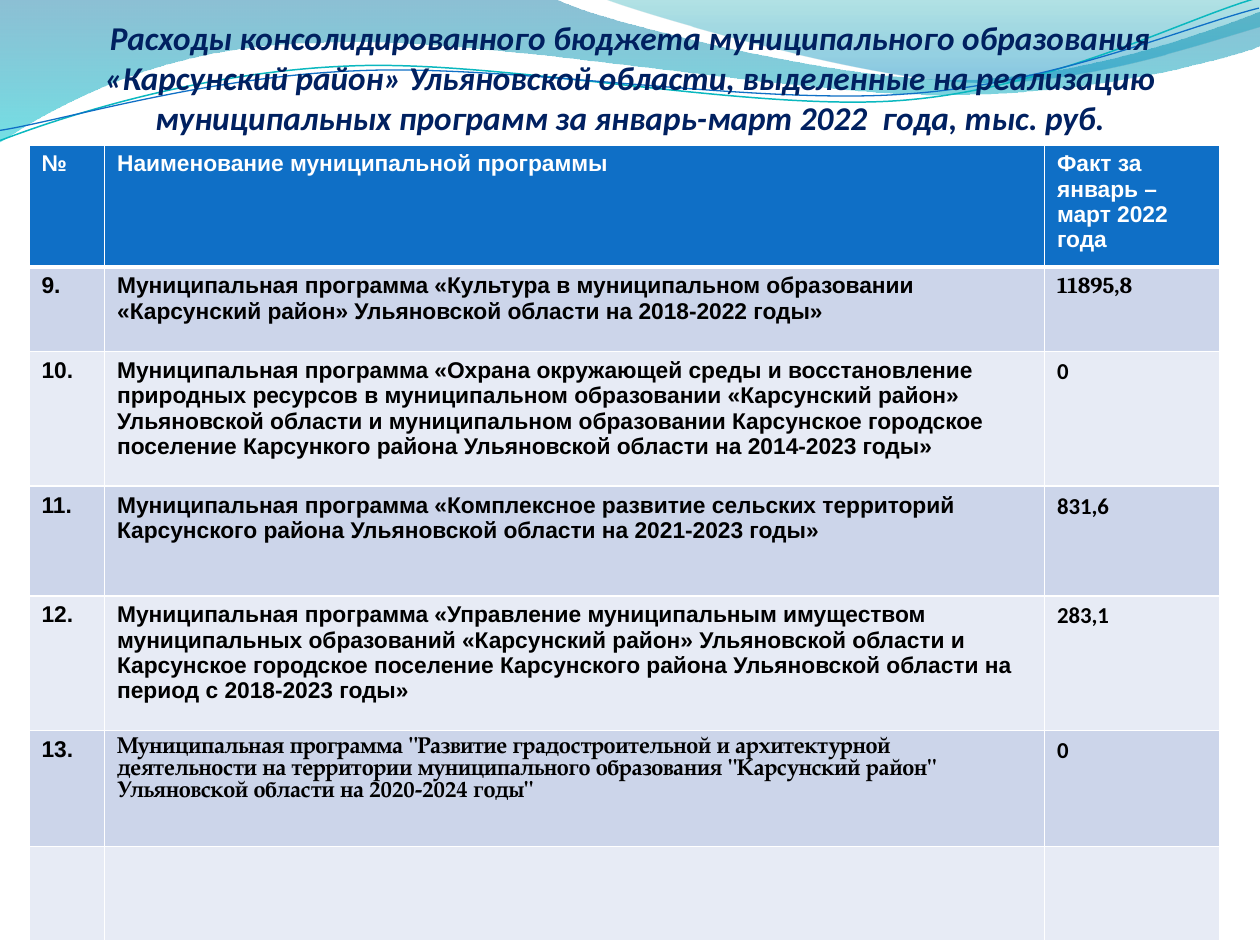
from lxml import etree
from pptx import Presentation
from pptx.dml.color import RGBColor
from pptx.enum.text import MSO_ANCHOR, PP_ALIGN
from pptx.oxml.ns import qn
from pptx.util import Inches, Pt

BOTTOM = MSO_ANCHOR.BOTTOM
CENTER = PP_ALIGN.CENTER
WHITE = RGBColor(0xFF, 0xFF, 0xFF)
BLACK = RGBColor(0x00, 0x00, 0x00)
NAVY = RGBColor(0x00, 0x20, 0x60)
BLUE = RGBColor(0x0F, 0x6F, 0xC6)
TEAL = RGBColor(0x0A, 0xB8, 0xBF)
DEEP_BLUE = RGBColor(0x00, 0x74, 0xA1)
CYAN = RGBColor(0x00, 0xC6, 0xCF)
DEEP_TEAL = RGBColor(0x00, 0xA1, 0xA9)
SKY = RGBColor(0x00, 0x8B, 0xBF)
BAND_DARK = RGBColor(0xCC, 0xD5, 0xEA)
BAND_LIGHT = RGBColor(0xE7, 0xEB, 0xF5)

presentation = Presentation()
presentation.slide_width = Inches(10)
presentation.slide_height = Inches(7.5)
slide = presentation.slides.add_slide(presentation.slide_layouts[6])


def add_outline(segments, close):
    """Each segment is one point (straight) or three points (cubic curve)."""
    corners = [
        (Inches(segment[i]), Inches(segment[i + 1]))
        for segment in segments for i in range(0, len(segment), 2)
    ]
    builder = slide.shapes.build_freeform(*corners[0])
    builder.add_line_segments(corners[1:], close=close)
    shape = builder.convert_to_shape()
    shape.shadow.inherit = False
    lines = shape._element.spPr.iter(qn("a:lnTo"))
    lines = iter(list(lines))
    for segment in segments[1:]:
        line = next(lines)
        if len(segment) == 6:
            curve = etree.Element(qn("a:cubicBezTo"))
            line.addprevious(curve)
            for control in (line, next(lines), next(lines)):
                curve.append(control[0])
                control.getparent().remove(control)
    return shape


waves = [
    ([(0, -0.01), (4.4, -0.01), (4.76, 0.17, 6.64, 0.63, 7.58, 0.63),
      (8.53, 0.63, 9.58, 0.26, 10, 0.09), (10.01, 0.36),
      (9.83, 0.44, 8.7, 0.76, 7.46, 0.75), (6.22, 0.75, 3.82, 0.28, 2.57, 0.34),
      (1.29, 0.35, 0.46, 0.83, -0.01, 1.13)],
     [(0, DEEP_BLUE, 45), (1, CYAN, 55)]),
    ([(4.79, -0.01), (5.09, 0.11, 6.82, 0.62, 7.69, 0.65),
      (8.56, 0.69, 9.61, 0.32, 10, 0.21), (10, 0)],
     [(0, DEEP_TEAL, 30), (0.8, SKY, 45)]),
]
for segments, stops in waves:
    wave = add_outline(segments, True)
    wave.line.fill.background()
    wave.fill.gradient()
    wave.fill.gradient_angle = 270
    for stop, (position, color, opacity) in zip(wave.fill.gradient_stops, stops):
        stop.position = position
        stop.color.rgb = color
    colors = wave._element.spPr.iter(qn("a:srgbClr"))
    for color_element, (position, color, opacity) in zip(colors, stops):
        etree.SubElement(color_element, qn("a:alpha")).set("val", str(opacity * 1000))

strands = [
    ([(-0.02, 0.88), (0.47, 0.72, 1.58, 0.41, 2.77, 0.42),
      (3.96, 0.42, 5.91, 0.93, 7.12, 0.9), (8.32, 0.87, 9.4, 0.36, 10, 0.22)],
     TEAL, 0.85),
    ([(-0.02, 0.8), (0.46, 0.75, 1.64, 0.45, 2.83, 0.46),
      (4.03, 0.46, 5.96, 0.88, 7.16, 0.85), (8.35, 0.83, 9.42, 0.42, 10.01, 0.3)],
     BLUE, 0.75),
]
for segments, color, width in strands:
    strand = add_outline(segments, False)
    strand.rotation = 357.3
    strand.fill.background()
    strand.line.color.rgb = color
    strand.line.width = Pt(width)

title = slide.shapes.add_textbox(Inches(0.5), Inches(0), Inches(9), Inches(1.09))
frame = title.text_frame
frame.word_wrap = True
frame.vertical_anchor = BOTTOM
frame.margin_left = frame.margin_right = frame.margin_bottom = 0
paragraph = frame.paragraphs[0]
paragraph.text = (
    "Расходы консолидированного бюджета муниципального образования "
    "«Карсунский район» Ульяновской области, выделенные на реализацию "
    "муниципальных программ за январь-март 2022  года, тыс. руб."
)
paragraph.alignment = CENTER
paragraph.font.name = "Calibri"
paragraph.font.size = Pt(19)
paragraph.font.bold = True
paragraph.font.italic = True
paragraph.font.color.rgb = NAVY

column_widths = [0.6, 7.46, 1.39]
row_heights = [0.97, 0.67, 1.07, 0.87, 1.07, 0.92, 0.75]
rows = [
    ("№", "Наименование муниципальной программы", "Факт за январь –март 2022 года"),
    ("9.", "Муниципальная программа «Культура в муниципальном образовании "
     "«Карсунский район» Ульяновской области на 2018-2022 годы»", "11895,8"),
    ("10.", "Муниципальная программа «Охрана окружающей среды и восстановление "
     "природных ресурсов в муниципальном образовании «Карсунский район» "
     "Ульяновской области и муниципальном образовании Карсунское городское "
     "поселение Карсункого района Ульяновской области на 2014-2023 годы»", "0"),
    ("11.", "Муниципальная программа «Комплексное развитие сельских территорий "
     "Карсунского района Ульяновской области на 2021-2023 годы»", "831,6"),
    ("12.", "Муниципальная программа «Управление муниципальным имуществом "
     "муниципальных образований «Карсунский район» Ульяновской области и "
     "Карсунское городское поселение Карсунского района Ульяновской области на "
     "период с 2018-2023 годы»", "283,1"),
    ("13.", 'Муниципальная программа "Развитие градостроительной и архитектурной '
     'деятельности на территории муниципального образования "Карсунский район" '
     'Ульяновской области на 2020-2024 годы"', "0"),
    ("", "", ""),
]
special_fonts = {(1, 2): "Cambria", (5, 1): "TeX Gyre Pagella"}

table = slide.shapes.add_table(
    len(rows), len(column_widths), Inches(0.23), Inches(1.15),
    Inches(sum(column_widths)), Inches(sum(row_heights)),
).table
for column, width in zip(table.columns, column_widths):
    column.width = Inches(width)
for row_index, texts in enumerate(rows):
    table.rows[row_index].height = Inches(row_heights[row_index])
    is_header = row_index == 0
    band = BAND_DARK if row_index % 2 else BAND_LIGHT
    for column_index, text in enumerate(texts):
        cell = table.cell(row_index, column_index)
        properties = cell._tc.get_or_add_tcPr()
        for side in ("L", "R", "T", "B"):
            is_thick = (row_index, side) in ((0, "B"), (1, "T"))
            border = etree.SubElement(properties, qn(f"a:ln{side}"))
            border.set("w", str(Pt(3 if is_thick else 1)))
            border_fill = etree.SubElement(border, qn("a:solidFill"))
            etree.SubElement(border_fill, qn("a:srgbClr")).set("val", str(WHITE))
        cell.fill.solid()
        cell.fill.fore_color.rgb = BLUE if is_header else band
        if not text:
            continue
        default_font = "Calibri" if column_index == 2 and not is_header else "Arial"
        paragraph = cell.text_frame.paragraphs[0]
        paragraph.text = text
        paragraph.font.name = special_fonts.get((row_index, column_index), default_font)
        paragraph.font.size = Pt(13)
        paragraph.font.bold = True
        paragraph.font.color.rgb = WHITE if is_header else BLACK

presentation.save("out.pptx")
